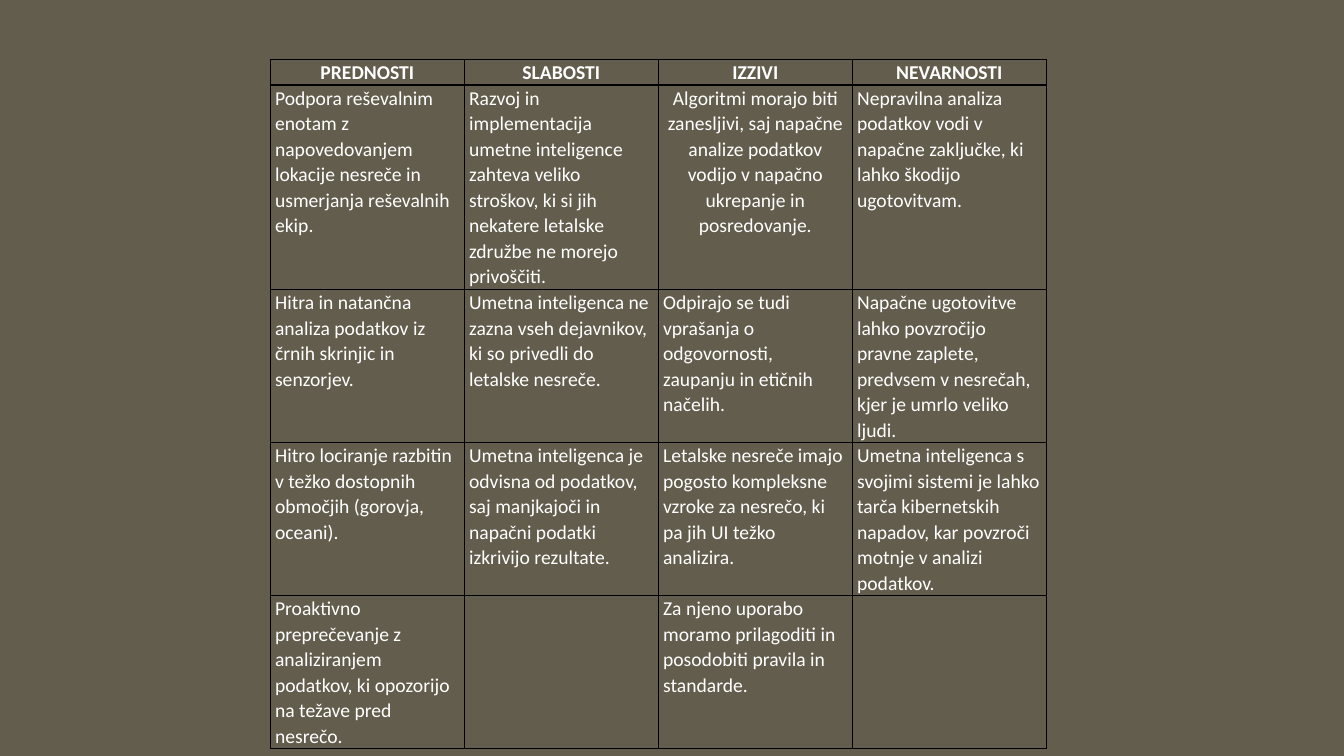
from dataclasses import dataclass

from lxml import etree
from pptx import Presentation
from pptx.dml.color import RGBColor
from pptx.enum.text import PP_ALIGN
from pptx.oxml.ns import qn
from pptx.util import Pt

LEFT = PP_ALIGN.LEFT
CENTER = PP_ALIGN.CENTER


@dataclass(frozen=True)
class Theme:
    background: RGBColor = RGBColor(0x63, 0x5D, 0x4D)
    text: RGBColor = RGBColor(0xFF, 0xFF, 0xFF)
    border: str = "000000"
    border_width: int = Pt(1)
    font: str = "Calibri"
    size: int = Pt(14)
    line_spacing: float = 1.07
    space_after: int = Pt(8)
    side_margin: int = Pt(3.4)


@dataclass(frozen=True)
class Entry:
    text: str = ""
    align: PP_ALIGN = LEFT
    bold: bool = False


THEME = Theme()

# Table geometry
TABLE_LEFT, TABLE_TOP = Pt(193.1), Pt(42.5)
COLUMN_WIDTH = Pt(138.6)
ROW_HEIGHTS = [Pt(16), Pt(131.8), Pt(98.6), Pt(98.6), Pt(98.6)]

# SWOT content, one list per row
HEADINGS = ["PREDNOSTI", "SLABOSTI", "IZZIVI", "NEVARNOSTI"]
ROWS = [
    [Entry(heading, CENTER, True) for heading in HEADINGS],
    [
        Entry("Podpora reševalnim enotam z napovedovanjem lokacije nesreče "
              "in usmerjanja reševalnih ekip."),
        Entry("Razvoj in implementacija umetne inteligence zahteva veliko stroškov, "
              "ki si jih nekatere letalske združbe ne morejo privoščiti."),
        Entry("Algoritmi morajo biti zanesljivi, saj napačne analize podatkov "
              "vodijo v napačno ukrepanje in posredovanje.", CENTER),
        Entry("Nepravilna analiza podatkov vodi v napačne zaključke, "
              "ki lahko škodijo ugotovitvam."),
    ],
    [
        Entry("Hitra in natančna analiza podatkov iz črnih skrinjic in senzorjev."),
        Entry("Umetna inteligenca ne zazna vseh dejavnikov, "
              "ki so privedli do letalske nesreče."),
        Entry("Odpirajo se tudi vprašanja o odgovornosti, zaupanju in etičnih načelih."),
        Entry("Napačne ugotovitve lahko povzročijo pravne zaplete, "
              "predvsem v nesrečah, kjer je umrlo veliko ljudi."),
    ],
    [
        Entry("Hitro lociranje razbitin v težko dostopnih območjih (gorovja, oceani)."),
        Entry("Umetna inteligenca je odvisna od podatkov, "
              "saj manjkajoči in napačni podatki izkrivijo rezultate."),
        Entry("Letalske nesreče imajo pogosto kompleksne vzroke za nesrečo, "
              "ki pa jih UI težko analizira."),
        Entry("Umetna inteligenca s svojimi sistemi je lahko tarča kibernetskih napadov, "
              "kar povzroči motnje v analizi podatkov."),
    ],
    [
        Entry("Proaktivno preprečevanje z analiziranjem podatkov, "
              "ki opozorijo na težave pred nesrečo."),
        Entry(),
        Entry("Za njeno uporabo moramo prilagoditi in posodobiti pravila in standarde."),
        Entry(),
    ],
]


def add_borders(cell) -> None:
    """Draw a solid line on all four sides; lines come before the fill."""
    properties = cell._tc.get_or_add_tcPr()
    for position, side in enumerate(("a:lnL", "a:lnR", "a:lnT", "a:lnB")):
        line = etree.Element(qn(side), w=str(THEME.border_width))
        fill = etree.SubElement(line, qn("a:solidFill"))
        etree.SubElement(fill, qn("a:srgbClr"), val=THEME.border)
        properties.insert(position, line)


def fill_cell(cell, entry: Entry) -> None:
    cell.fill.background()
    add_borders(cell)
    cell.margin_left = cell.margin_right = THEME.side_margin
    cell.margin_top = cell.margin_bottom = Pt(0)
    if not entry.text:
        return
    cell.text_frame.text = entry.text
    paragraph = cell.text_frame.paragraphs[0]
    paragraph.alignment = entry.align
    paragraph.line_spacing = THEME.line_spacing
    paragraph.space_after = THEME.space_after
    font = paragraph.runs[0].font
    font.name, font.size, font.bold = THEME.font, THEME.size, entry.bold
    font.color.rgb = THEME.text


def add_swot_table(slide) -> None:
    table = slide.shapes.add_table(
        len(ROWS), len(HEADINGS), TABLE_LEFT, TABLE_TOP,
        COLUMN_WIDTH * len(HEADINGS), sum(ROW_HEIGHTS),
    ).table
    table.first_row = table.horz_banding = False
    for column in table.columns:
        column.width = COLUMN_WIDTH
    for row, height, entries in zip(table.rows, ROW_HEIGHTS, ROWS):
        row.height = height
        for cell, entry in zip(row.cells, entries):
            fill_cell(cell, entry)


def main() -> None:
    presentation = Presentation()
    presentation.slide_width, presentation.slide_height = Pt(960), Pt(540)
    slide = presentation.slides.add_slide(presentation.slide_layouts[6])

    # Background
    background = slide.background.fill
    background.solid()
    background.fore_color.rgb = THEME.background

    # Table
    add_swot_table(slide)
    presentation.save("out.pptx")


if __name__ == "__main__":
    main()
